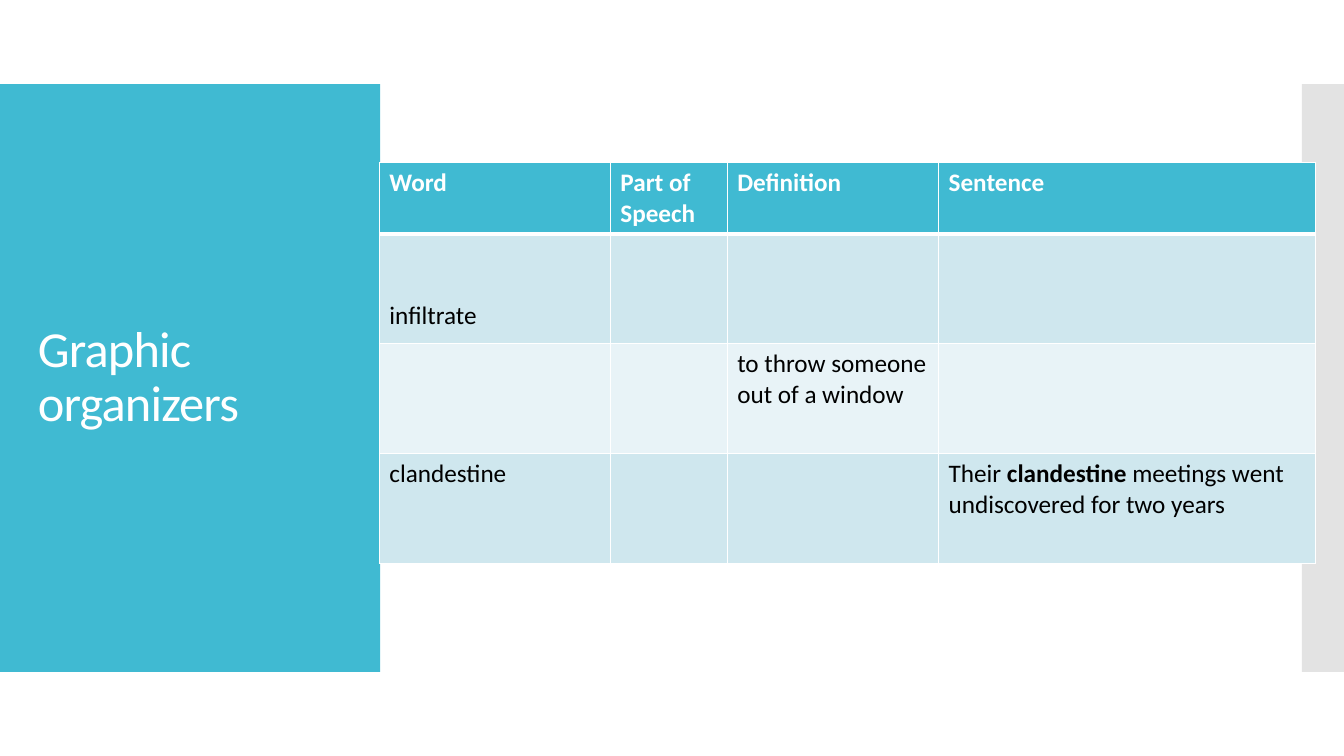
from lxml.etree import SubElement as Sub
from pptx import Presentation
from pptx.dml.color import RGBColor as RGB
from pptx.enum.shapes import MSO_SHAPE as SHAPE
from pptx.enum.text import MSO_ANCHOR as ANCHOR
from pptx.oxml.ns import qn
from pptx.util import Pt

TEAL = RGB(0x40, 0xBA, 0xD2)
GRAY = RGB(0xC8, 0xC8, 0xC8)
WHITE = RGB(0xFF, 0xFF, 0xFF)
BLACK = RGB(0, 0, 0)
BANDS = [RGB(0xCF, 0xE7, 0xEE), RGB(0xE8, 0xF3, 0xF7)]

FONT = "Calibri"
COLS = [165, 83.5, 151, 269.5]
HEAD, ROW = 51.1, 78.5

# Each cell is a list of (text, bold) runs
HEADS = ["Word", "Part of Speech", "Definition", "Sentence"]
ROWS = [
    [[("infiltrate", False)], [], [], []],
    [[], [], [("to throw someone out of a window", False)], []],
    [[("clandestine", False)], [], [],
     [("Their ", False), ("clandestine ", True),
      ("meetings went undiscovered for two years", False)]],
]


def add_run(para, text, size, color, bold=False):
    run = para.add_run()
    run.text = text
    font = run.font
    font.name, font.size, font.bold = FONT, Pt(size), bold
    font.color.rgb = color
    return run


def add_bar(slide, box, color, alpha=None):
    bar = slide.shapes.add_shape(SHAPE.RECTANGLE, *map(Pt, box))
    bar.shadow.inherit = False
    bar.fill.solid()
    bar.fill.fore_color.rgb = color
    bar.line.fill.background()
    if alpha is not None:
        tint = bar.fill._xPr.find(".//" + qn("a:srgbClr"))
        Sub(tint, qn("a:alpha"), val=str(alpha * 1000))


def add_title(slide, box, text):
    left, top, width, height = box
    # Teal panel
    add_bar(slide, box, TEAL)
    # Title inset in the panel
    area = (left + 20, top + 29, width - 39.5, height - 58)
    frame = slide.shapes.add_textbox(*map(Pt, area)).text_frame
    frame.word_wrap = True
    frame.vertical_anchor = ANCHOR.MIDDLE
    para = frame.paragraphs[0]
    para.line_spacing = 0.9
    run = add_run(para, text, 36, WHITE)
    run.font._element.set("spc", "-60")


def set_edges(cell, widths):
    props = cell._tc.get_or_add_tcPr()
    for side, width in zip("LRTB", widths):
        line = Sub(props, qn("a:ln" + side), w=str(Pt(width)))
        fill = Sub(line, qn("a:solidFill"))
        Sub(fill, qn("a:srgbClr"), val=str(WHITE))


def fill_cell(cell, runs, back, color, widths):
    set_edges(cell, widths)
    cell.fill.solid()
    cell.fill.fore_color.rgb = back
    para = cell.text_frame.paragraphs[0]
    para.font.size = Pt(18)
    for text, bold in runs:
        add_run(para, text, 18, color, bold)


def add_grid(slide, left, top):
    high = HEAD + ROW * len(ROWS)
    box = map(Pt, (left, top, sum(COLS), high))
    table = slide.shapes.add_table(len(ROWS) + 1, len(COLS), *box).table
    table.horz_banding = False
    for col, width in zip(table.columns, COLS):
        col.width = Pt(width)
    for num, row in enumerate(table.rows):
        row.height = Pt(ROW if num else HEAD)
    # Header row
    for num, text in enumerate(HEADS):
        fill_cell(table.cell(0, num), [(text, True)], TEAL, WHITE, (1, 1, 1, 3))
    # Banded word rows
    for num, row in enumerate(ROWS):
        edges = (1, 1, 1 if num else 3, 1)
        for col, runs in enumerate(row):
            fill_cell(table.cell(num + 1, col), runs, BANDS[num % 2], BLACK, edges)
    # The first word sits low in its cell
    first = table.cell(1, 0)
    first.vertical_anchor = ANCHOR.BOTTOM
    first.margin_bottom = Pt(9)


def main():
    deck = Presentation()
    deck.slide_width, deck.slide_height = Pt(960), Pt(540)
    slide = deck.slides.add_slide(deck.slide_layouts[6])
    add_title(slide, (0, 60, 271.5, 420), "Graphic organizers")
    add_bar(slide, (930, 60, 30, 420), GRAY, 50)
    add_grid(slide, 271, 116)
    deck.save("out.pptx")


if __name__ == "__main__":
    main()
